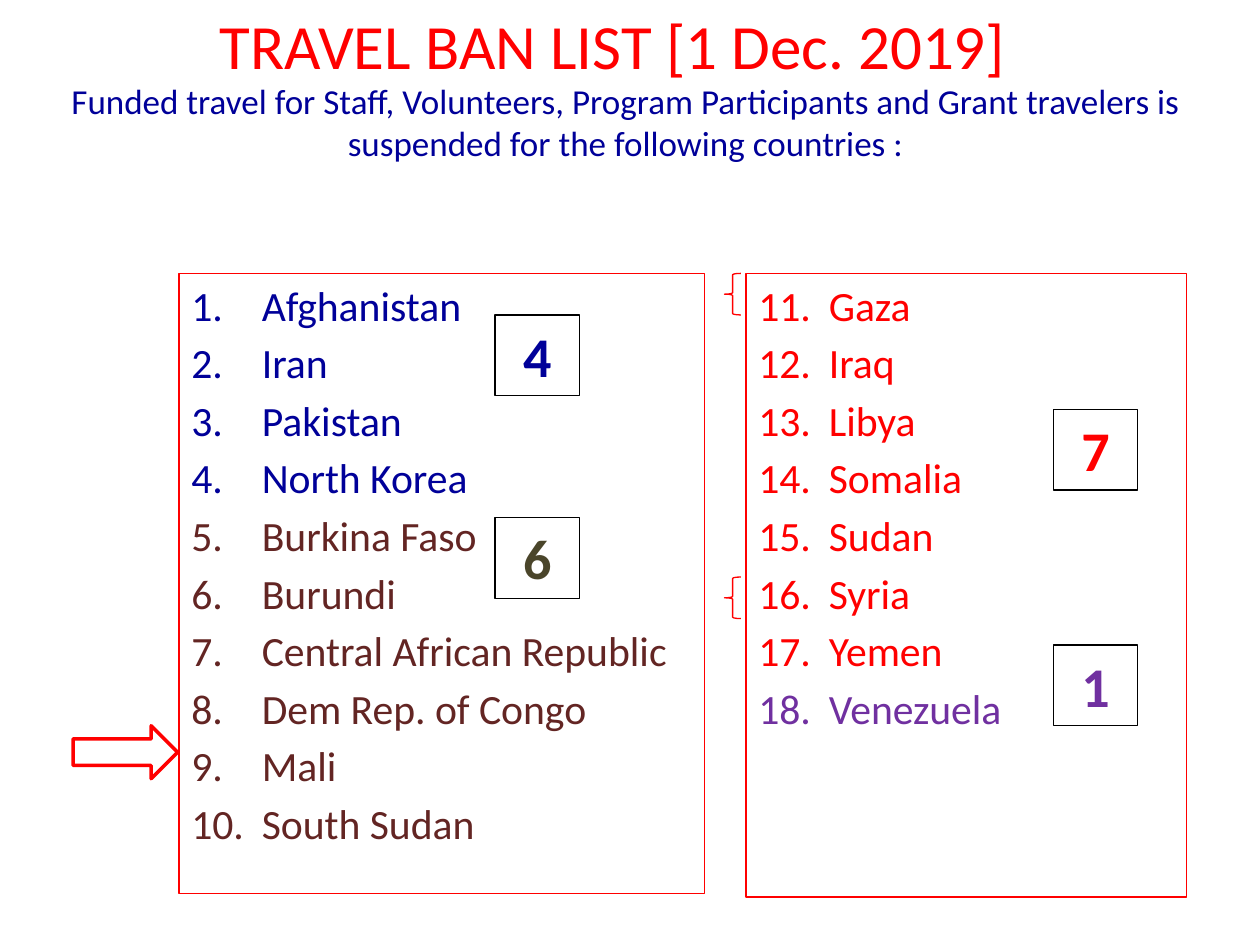
from lxml import etree
from pptx import Presentation
from pptx import util as u
from pptx.dml import color
from pptx.enum import shapes, text
from pptx.oxml import ns

RED, NAVY, BROWN, PURPLE, OLIVE = "FF0000", "000099", "632523", "7030A0", "4A452A"
LEFT_COUNTRIES = [
    ("Afghanistan", NAVY), ("Iran", NAVY), ("Pakistan", NAVY), ("North Korea", NAVY),
    ("Burkina Faso", BROWN), ("Burundi", BROWN), ("Central African Republic", BROWN),
    ("Dem Rep. of Congo", BROWN), ("Mali", BROWN), ("South Sudan", BROWN),
]
RIGHT_COUNTRIES = [(name, RED) for name in
                   ("Gaza", "Iraq", "Libya", "Somalia", "Sudan", "Syria", "Yemen")]
RIGHT_COUNTRIES.append(("Venezuela", PURPLE))
COUNTS = [("6", 3.93, 4.11, OLIVE), ("7", 8.36, 3.25, RED),
          ("4", 3.93, 2.5, NAVY), ("1", 8.36, 5.12, PURPLE)]


def rgb(value):
    return color.RGBColor.from_string(value)


class SlideBuilder:
    font = "Calibri"
    list_size = 23.8
    list_gap = 4.3
    hanging = 0.56

    def __init__(self, slide):
        self.slide = slide

    def style(self, paragraph, size, ink, bold=False):
        for span in paragraph.runs:
            span.font.name = self.font
            span.font.size = u.Pt(size)
            span.font.bold = bold
            span.font.color.rgb = rgb(ink)

    def centred_text(self, box, words, size, ink, bold=False):
        box.text_frame.word_wrap = True
        box.text_frame.text = words
        para = box.text_frame.paragraphs[0]
        para.alignment = text.PP_ALIGN.CENTER
        self.style(para, size, ink, bold)

    def label(self, words, bounds, size, ink, anchor=text.MSO_ANCHOR.TOP):
        box = self.slide.shapes.add_textbox(*map(u.Inches, bounds))
        box.text_frame.vertical_anchor = anchor
        self.centred_text(box, words, size, ink)

    def outline(self, kind, bounds, ink, width=0.75, fill=None):
        shape = self.slide.shapes.add_shape(kind, *map(u.Inches, bounds))
        shape.shadow.inherit = False
        if fill:
            shape.fill.solid()
            shape.fill.fore_color.rgb = rgb(fill)
        else:
            shape.fill.background()
        shape.line.color.rgb = rgb(ink)
        shape.line.width = u.Pt(width)
        shape.text_frame.vertical_anchor = text.MSO_ANCHOR.TOP
        return shape

    def numbered_list(self, countries, bounds, start=1):
        box = self.outline(shapes.MSO_SHAPE.RECTANGLE, bounds, RED)
        frame = box.text_frame
        frame.word_wrap = True
        frame.text = "\n".join(name for name, ink in countries)
        for index, (para, (name, ink)) in enumerate(zip(frame.paragraphs, countries)):
            props = para._p.get_or_add_pPr()
            props.set("marL", str(u.Inches(self.hanging)))
            props.set("indent", str(-u.Inches(self.hanging)))
            etree.SubElement(props, ns.qn("a:buAutoNum"),
                             type="arabicPeriod", startAt=str(start))
            para.alignment = text.PP_ALIGN.LEFT
            if index:
                para.space_before = u.Pt(self.list_gap)
            self.style(para, self.list_size, ink)

    def count(self, digit, left, top, ink):
        box = self.outline(shapes.MSO_SHAPE.RECTANGLE, (left, top, 0.67, 0.64), "000000")
        self.centred_text(box, digit, 32, ink, bold=True)


def main():
    deck = Presentation()
    deck.slide_width, deck.slide_height = u.Inches(10), u.Inches(7.5)
    page = SlideBuilder(deck.slides.add_slide(deck.slide_layouts[6]))
    page.label("TRAVEL BAN LIST [1 Dec. 2019] ", (0.42, 0, 9, 0.7), 36, RED,
               text.MSO_ANCHOR.MIDDLE)
    page.numbered_list(LEFT_COUNTRIES, (1.42, 2.17, 4.17, 4.92))
    page.numbered_list(RIGHT_COUNTRIES, (5.92, 2.17, 3.5, 4.95), start=11)
    page.label("Funded travel for Staff, Volunteers, Program Participants and Grant "
               "travelers is suspended for the following countries :",
               (0.38, 0.58, 9.17, 0.77), 20, NAVY)
    page.outline(shapes.MSO_SHAPE.RIGHT_ARROW, (0.58, 5.76, 0.83, 0.42), RED, 2, "FFFFFF")
    for top in (2.17, 4.58):
        page.outline(shapes.MSO_SHAPE.LEFT_BRACE, (5.75, top, 0.13, 0.33), RED)
    for digit, left, top, ink in COUNTS:
        page.count(digit, left, top, ink)
    deck.save("out.pptx")


if __name__ == "__main__":
    main()
